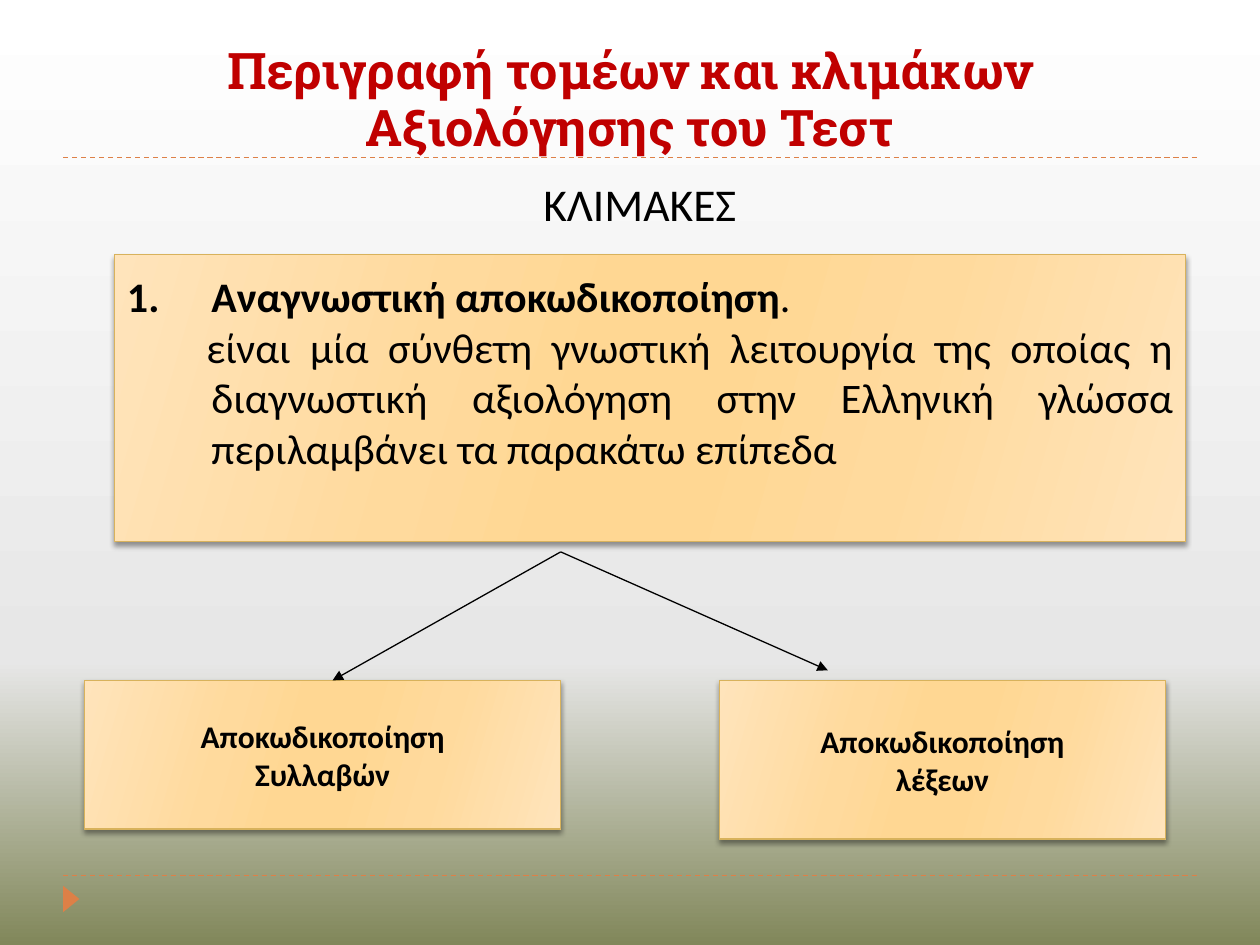
from lxml.etree import SubElement
from pptx import Presentation
from pptx.dml.color import RGBColor
from pptx.enum.dml import MSO_LINE
from pptx.enum.shapes import MSO_CONNECTOR, MSO_SHAPE
from pptx.enum.text import MSO_ANCHOR, MSO_AUTO_SIZE, PP_ALIGN
from pptx.oxml.ns import qn
from pptx.util import Inches, Pt

# Content
TITLE = "Περιγραφή τομέων και κλιμάκων Αξιολόγησης του Τεστ"
HEADING = "ΚΛΙΜΑΚΕΣ"
SCALE_NAME = "Αναγνωστική αποκωδικοποίηση"
SCALE_TEXT = ("είναι μία σύνθετη γνωστική λειτουργία της οποίας η διαγνωστική "
              "αξιολόγηση στην Ελληνική γλώσσα περιλαμβάνει τα παρακάτω επίπεδα")
LEVELS = [  # lines, box, arrow tip
    (("Αποκωδικοποίηση", "Συλλαβών"), (0.67, 5.4, 3.78, 1.18), (2.64, 5.4)),
    (("Αποκωδικοποίηση", "λέξεων"), (5.71, 5.4, 3.54, 1.26), (6.57, 5.32)),
]
ARROW_START = (4.45, 4.38)
SCALE_BOX = (0.91, 2.02, 8.5, 2.28)
RULE_HEIGHTS = (6.95, 1.25)

# Style
BLACK, RED, ORANGE, GOLD = "000000", "C00000", "DD8047", "D8B25C"
BACKDROP = [(0, "81875A"), (30, "E7E7E7"), (100, "FFFFFF")]
PANEL = [(0, "FFE4BB"), (30, "FFDA9D"), (45, "FFD793"),
         (55, "FFD793"), (73, "FFDA9D"), (100, "FFE4BB")]
INDENT = 0.67


def color(code):
    return RGBColor.from_string(code)


def inches(values):
    return [Inches(value) for value in values]


def set_gradient(fill, element, stops, angle):
    fill.gradient()
    fill.gradient_angle = angle
    stop_list = next(element.iter(qn("a:gsLst")))
    for old_stop in list(stop_list):
        stop_list.remove(old_stop)
    for position, code in stops:
        stop = SubElement(stop_list, qn("a:gs"), pos=str(position * 1000))
        SubElement(stop, qn("a:srgbClr"), val=code)


def set_font(paragraph, size, code=BLACK, bold=False, name="Calibri"):
    font = paragraph.font
    font.name, font.size, font.bold = name, Pt(size), bold
    font.color.rgb = color(code)


def set_indent(paragraph, left, first):
    properties = paragraph._p.get_or_add_pPr()
    properties.set("marL", str(Inches(left)))
    properties.set("indent", str(Inches(first)))
    return properties


def add_line(start, end, code, dash=None, arrow=False):
    connector = slide.shapes.add_connector(
        MSO_CONNECTOR.STRAIGHT, *inches(start), *inches(end))
    line = connector.line
    line.color.rgb, line.width = color(code), Pt(0.75)
    if dash:
        line.dash_style = dash
    if arrow:
        SubElement(line._get_or_add_ln(), qn("a:tailEnd"), type="triangle")
    SubElement(connector._element.spPr, qn("a:effectLst"))


def add_panel(box):
    panel = slide.shapes.add_shape(MSO_SHAPE.RECTANGLE, *inches(box))
    set_gradient(panel.fill, panel._element, PANEL, 344)
    panel.line.color.rgb, panel.line.width = color(GOLD), Pt(0.75)
    panel.shadow.inherit = False
    effects = panel._element.spPr.find(qn("a:effectLst"))
    shadow = SubElement(effects, qn("a:outerShdw"), blurRad=str(Pt(3)),
                        dist=str(Pt(2)), dir="5400000", rotWithShape="0")
    shade = SubElement(shadow, qn("a:srgbClr"), val=BLACK)
    SubElement(shade, qn("a:alpha"), val="40000")
    return panel


def place(placeholder, box):
    (placeholder.left, placeholder.top,
     placeholder.width, placeholder.height) = inches(box)
    placeholder.text_frame.auto_size = MSO_AUTO_SIZE.NONE
    return placeholder.text_frame


presentation = Presentation()
presentation.slide_width, presentation.slide_height = inches((10, 7.5))
slide = presentation.slides.add_slide(presentation.slide_layouts[1])
set_gradient(slide.background.fill, slide._element, BACKDROP, 90)

# Dashed rules and corner marker
for height in RULE_HEIGHTS:
    add_line((0.5, height), (9.5, height), ORANGE, dash=MSO_LINE.DASH)
marker = slide.shapes.add_shape(MSO_SHAPE.ISOSCELES_TRIANGLE,
                                *inches((0.46, 7.07, 0.21, 0.13)))
marker.rotation = 90
marker.shadow.inherit = False
marker.fill.solid()
marker.fill.fore_color.rgb = color(ORANGE)
marker.line.fill.background()

# Title and heading
title_frame = place(slide.shapes.title, (0.5, 0.17, 9, 1.08))
title_frame.text = TITLE
title_frame.vertical_anchor = MSO_ANCHOR.BOTTOM
title_frame.margin_bottom = 0
title = title_frame.paragraphs[0]
title.alignment, title.line_spacing = PP_ALIGN.CENTER, 0.93
set_font(title, 28.8, RED, True, "Roboto Slab")

heading_frame = place(slide.placeholders[1], (0.58, 1.35, 9, 5.4))
heading_frame.text = HEADING
heading = heading_frame.paragraphs[0]
heading.alignment, heading.space_before = PP_ALIGN.CENTER, Pt(0)
SubElement(set_indent(heading, 0, 0), qn("a:buNone"))
set_font(heading, 26)

# Scale description
add_panel(SCALE_BOX)
description_frame = slide.shapes.add_textbox(
    *inches((0.91, 2.1, 8.5, 2.12))).text_frame
description_frame.word_wrap = True
name = description_frame.paragraphs[0]
SubElement(set_indent(name, INDENT, -INDENT), qn("a:buFont"), typeface="+mj-lt")
SubElement(name._p.pPr, qn("a:buAutoNum"), type="arabicPeriod")
name_run = name.add_run()
name_run.text, name_run.font.bold = SCALE_NAME, True
name.add_run().text = "."
explanation = description_frame.add_paragraph()
explanation.text = SCALE_TEXT
set_indent(explanation, INDENT, -0.04)
for paragraph in (name, explanation):
    paragraph.alignment = PP_ALIGN.JUSTIFY
    set_font(paragraph, 24)

# Levels with their arrows
for lines, box, _ in LEVELS:
    frame = add_panel(box).text_frame
    frame.text = "\n".join(lines)
    frame.word_wrap = False
    frame.vertical_anchor = MSO_ANCHOR.MIDDLE
    for paragraph in frame.paragraphs:
        paragraph.alignment = PP_ALIGN.CENTER
        set_font(paragraph, 18, bold=True)
for _, _, tip in LEVELS:
    add_line(ARROW_START, tip, BLACK, arrow=True)

presentation.save("out.pptx")
